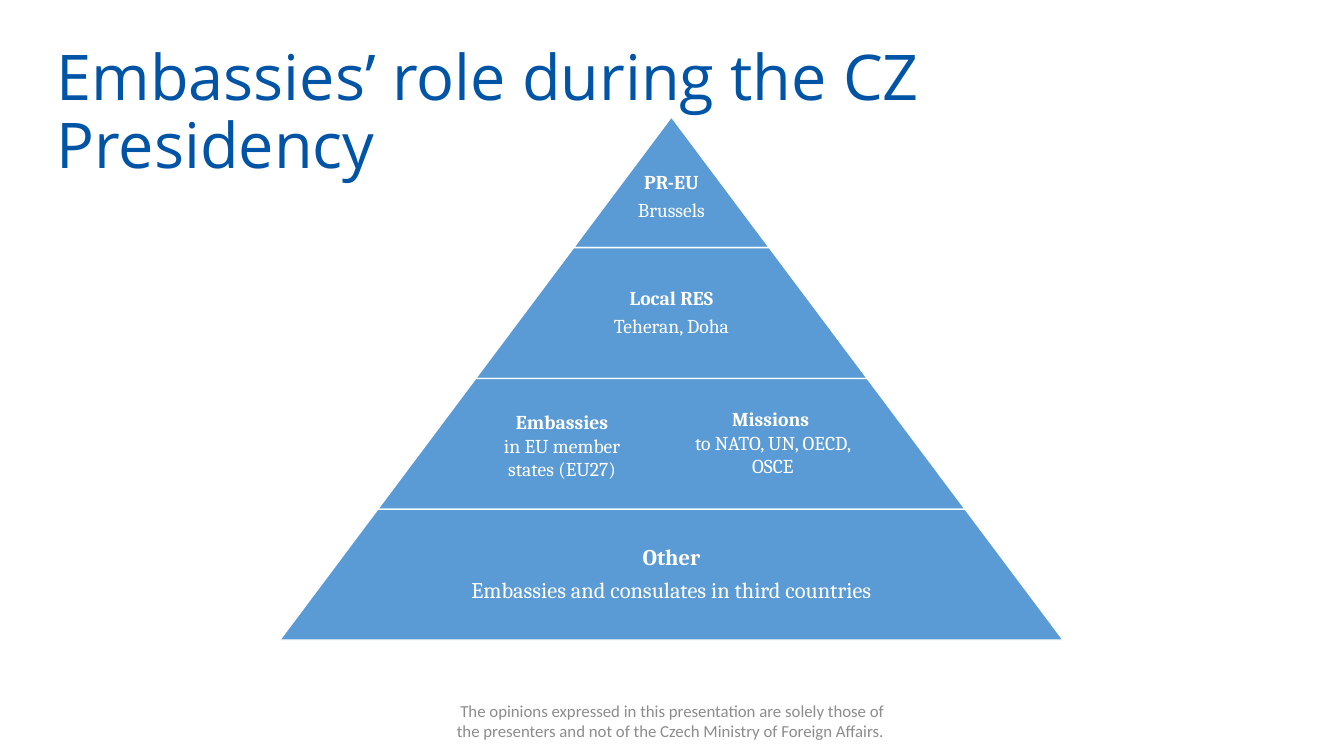
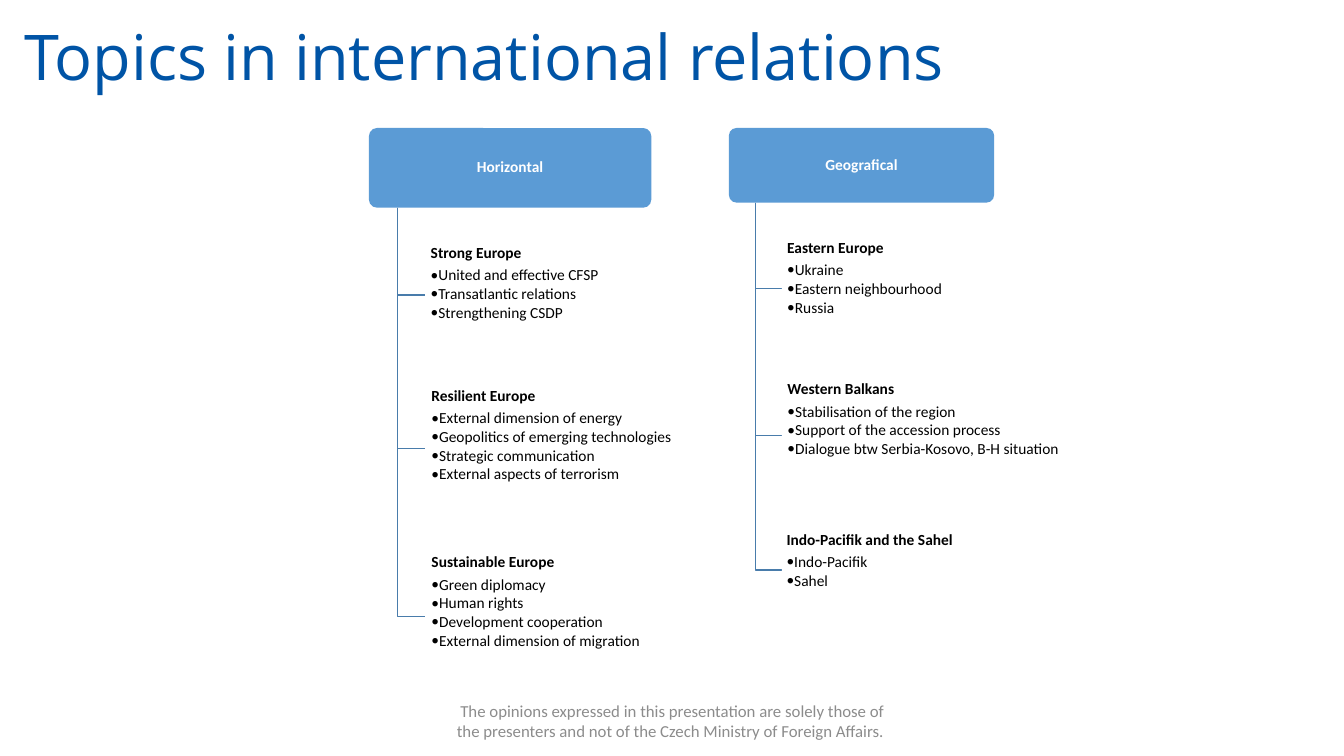
from lxml.etree import SubElement
from pptx import Presentation
from pptx.dml.color import RGBColor
from pptx.enum.shapes import MSO_SHAPE
from pptx.enum.text import MSO_ANCHOR, MSO_AUTO_SIZE, PP_ALIGN
from pptx.oxml.ns import qn
from pptx.util import Inches, Pt

TITLE_BLUE = RGBColor(0x00, 0x54, 0xA6)
FILL_BLUE = RGBColor(0x5B, 0x9B, 0xD5)
LINE_BLUE = RGBColor(0x49, 0x7C, 0xAB)
GREY = RGBColor(0x8C, 0x8C, 0x8C)
WHITE = RGBColor(0xFF, 0xFF, 0xFF)
BLACK = RGBColor(0x00, 0x00, 0x00)

DISCLAIMER = ("The opinions expressed in this presentation are solely those of "
              "the presenters and not of the Czech Ministry of Foreign Affairs. ")

ROLE_TITLE = ("Embassies’ role during the CZ Presidency", (0.46, 0.41, 10, 0.79))
APEX_X, APEX_Y = 6.66, 1.16
BASE_WIDTH, PYRAMID_HEIGHT = 7.77, 5.19
BANDS = [
    {"heading": "PR-EU", "detail": "Brussels", "size": 14, "drop": 0.15},
    {"heading": "Local RES", "detail": "Teheran, Doha", "size": 14, "drop": 0},
    None,
    {"heading": "Other", "detail": "Embassies and consulates in third countries",
     "size": 16, "drop": 0},
]
SPLIT_BAND = [
    ("Embassies", "in EU member states (EU27)", (4.68, 4.02, 1.79, 0.81)),
    ("Missions ", "to NATO, UN, OECD, OSCE", (6.77, 3.99, 1.79, 0.81)),
]

TOPICS_TITLE = ("Topics in international relations", (0.14, 0.21, 13.05, 0.79))
TOPIC_WIDTH = 2.88
BRANCHES = [
    ("Horizontal", (3.66, 1.27, 2.8, 0.79), [
        ("Strong Europe", 2.38, 1.09,
         ["United and effective CFSP", "Transatlantic relations", "Strengthening CSDP"]),
        ("Resilient Europe", 3.79, 1.32,
         ["External dimension of energy", "Geopolitics of emerging technologies",
          "Strategic communication", "External aspects of terrorism"]),
        ("Sustainable Europe", 5.44, 1.35,
         ["Green diplomacy", "Human rights", "Development cooperation",
          "External dimension of migration"]),
    ]),
    ("Geografical", (7.23, 1.27, 2.63, 0.74), [
        ("Eastern Europe", 2.33, 1.06, ["Ukraine", "Eastern neighbourhood", "Russia"]),
        ("Western Balkans", 3.73, 1.18,
         ["Stabilisation of the region", "Support of the accession process",
          "Dialogue btw Serbia-Kosovo, B-H situation"]),
        ("Indo-Pacifik and the Sahel", 5.23, 0.85, ["Indo-Pacifik", "Sahel"]),
    ]),
]


def box(values):
    return [Inches(value) for value in values]


def prepare(frame, anchor, inset=None):
    frame.word_wrap = True
    frame.auto_size = MSO_AUTO_SIZE.NONE
    frame.vertical_anchor = anchor
    if inset is not None:
        frame.margin_left = frame.margin_right = Inches(inset)
        frame.margin_top = frame.margin_bottom = Inches(inset)


def write(frame, lines, font, size, color, align, spacing=1, after=0, bullets=False):
    for index, (text, bold) in enumerate(lines):
        paragraph = frame.paragraphs[0] if index == 0 else frame.add_paragraph()
        paragraph.alignment = align
        paragraph.line_spacing = spacing
        bulleted = bullets and index > 0
        paragraph.space_after = Pt(round(size * (0.14 if bulleted else after), 1))
        if bulleted:
            properties = paragraph._p.get_or_add_pPr()
            properties.set("marL", str(Inches(0.06)))
            properties.set("indent", str(-Inches(0.06)))
            SubElement(properties, qn("a:buFont")).set("typeface", font)
            SubElement(properties, qn("a:buChar")).set("char", "•")
        run = paragraph.add_run()
        run.text = text
        run.font.name = font
        run.font.size = Pt(size)
        run.font.bold = bold
        run.font.color.rgb = color


def add_text(slide, place, lines, font, size, color, anchor, inset=None, **layout):
    frame = slide.shapes.add_textbox(*box(place)).text_frame
    prepare(frame, anchor, inset)
    write(frame, lines, font, size, color, PP_ALIGN.CENTER, **layout)


def add_panel(slide, kind, place, fill, adjustment, outline=None):
    panel = slide.shapes.add_shape(kind, *box(place))
    panel.shadow.inherit = False
    panel.adjustments[0] = adjustment
    panel.fill.solid()
    panel.fill.fore_color.rgb = fill
    if outline is None:
        panel.line.fill.background()
    else:
        panel.line.color.rgb = outline
        panel.line.width = Pt(1)
    return panel


def add_slide(deck, heading):
    text, place = heading
    slide = deck.slides.add_slide(deck.slide_layouts[5])
    title = slide.shapes.title
    title.left, title.top, title.width, title.height = box(place)
    prepare(title.text_frame, MSO_ANCHOR.TOP)
    write(title.text_frame, [(text, False)], "Open Sans", 45, TITLE_BLUE,
          PP_ALIGN.LEFT, spacing=0.9)
    add_text(slide, (4.42, 6.95, 4.5, 0.4), [(DISCLAIMER, False)], "Calibri", 12, GREY,
             MSO_ANCHOR.MIDDLE)
    return slide


def add_pyramid(slide):
    height = PYRAMID_HEIGHT / len(BANDS)
    step = BASE_WIDTH / len(BANDS)
    for index, band in enumerate(BANDS):
        width = step * (index + 1)
        top = APEX_Y + height * index
        add_panel(slide, MSO_SHAPE.TRAPEZOID, (APEX_X - width / 2, top, width, height),
                  FILL_BLUE, step / 2 / height, WHITE)
        if band:
            text_width = max(step, width * 0.65)
            add_text(slide, (APEX_X - text_width / 2, top + band["drop"], text_width, height),
                     [(band["heading"], True), (band["detail"], False)],
                     "Cambria", band["size"], WHITE, MSO_ANCHOR.MIDDLE, 0.02,
                     spacing=0.9, after=0.37)
    for heading, detail, place in SPLIT_BAND:
        add_text(slide, place, [(heading, True), (detail, False)], "Cambria", 14, WHITE,
                 MSO_ANCHOR.TOP)


def add_elbow(slide, x, top, right, bottom):
    builder = slide.shapes.build_freeform(Inches(x), Inches(top))
    builder.add_line_segments(
        [(Inches(x), Inches(bottom)), (Inches(right), Inches(bottom))], close=False)
    elbow = builder.convert_to_shape()
    elbow.shadow.inherit = False
    elbow.fill.background()
    elbow.line.color.rgb = LINE_BLUE
    elbow.line.width = Pt(1)


def add_branch(slide, heading, place, topics):
    left, top, width, height = place
    header = add_panel(slide, MSO_SHAPE.ROUNDED_RECTANGLE, place, FILL_BLUE, 0.1)
    prepare(header.text_frame, MSO_ANCHOR.MIDDLE, 0.02)
    write(header.text_frame, [(heading, True)], "Calibri", 11, WHITE, PP_ALIGN.CENTER,
          spacing=0.9, after=0.37)
    stem_x, topic_x = left + width * 0.1, left + width * 0.2
    for name, topic_top, topic_height, points in topics:
        add_elbow(slide, stem_x, top + height, topic_x, topic_top + topic_height / 2)
        topic = add_panel(slide, MSO_SHAPE.ROUNDED_RECTANGLE,
                          (topic_x, topic_top, TOPIC_WIDTH, topic_height), WHITE, 0.1)
        prepare(topic.text_frame, MSO_ANCHOR.TOP, 0.02)
        write(topic.text_frame, [(name, True)] + [(point, False) for point in points],
              "Calibri", 11, BLACK, PP_ALIGN.LEFT, spacing=0.9, after=0.37, bullets=True)


def main():
    deck = Presentation()
    deck.slide_width, deck.slide_height = Inches(13.33), Inches(7.5)
    add_pyramid(add_slide(deck, ROLE_TITLE))
    topics_slide = add_slide(deck, TOPICS_TITLE)
    for branch in BRANCHES:
        add_branch(topics_slide, *branch)
    deck.save("out.pptx")


if __name__ == "__main__":
    main()
